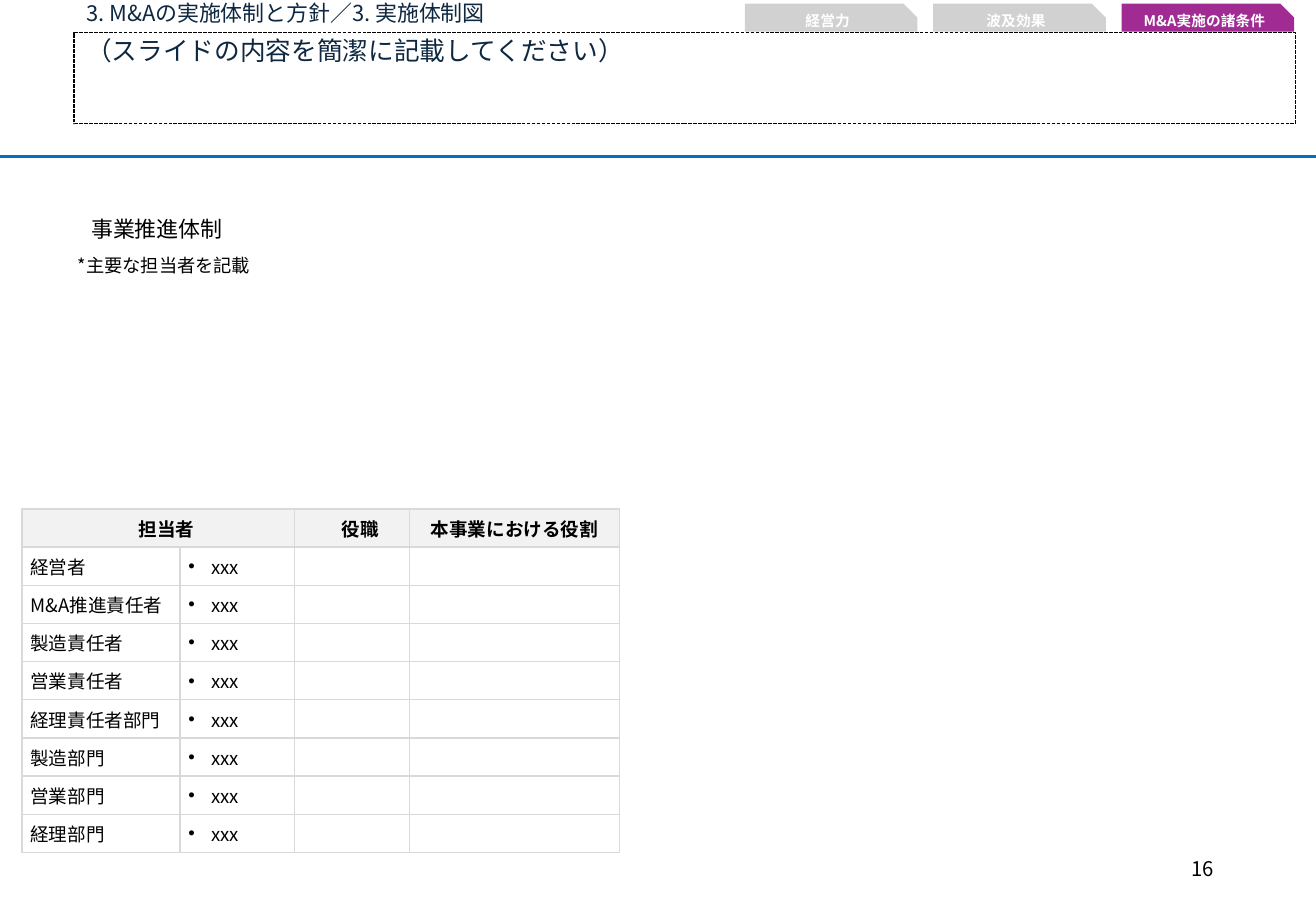
from lxml import etree
from pptx import Presentation
from pptx import util as u
from pptx.dml.color import RGBColor
from pptx.enum import dml, shapes, text
from pptx.oxml import ns

FONT = "Noto Sans CJK JP"
INK = dict(navy="0E2841", black="000000", white="FFFFFF", blue="0070C0",
           gray="D1D1D1", rule="D9D9D9", head="F2F2F2", plum="A02B93")
COLS, ROWS = 1083, 750
UNIT = u.Inches(0.01)
ALIGN = dict(l=text.PP_ALIGN.LEFT, c=text.PP_ALIGN.CENTER, r=text.PP_ALIGN.RIGHT)
STAFF = ["経営者", "M&A推進責任者", "製造責任者", "営業責任者", "経理責任者部門",
         "製造部門", "営業部門", "経理部門"]


def grid(*cells):
    return [round(n * UNIT) for n in cells]


def tint(name):
    return RGBColor.from_string(INK[name])


def add(node, tag, **attrs):
    return etree.SubElement(node, ns.qn(tag), **attrs)


def write(frame, words, size=11, color="black", bold=False, align="l",
          mid=True, space=None, left=0, first=0, bullet=None):
    frame.word_wrap = True
    frame.auto_size = text.MSO_AUTO_SIZE.NONE
    frame.vertical_anchor = text.MSO_ANCHOR.MIDDLE if mid else text.MSO_ANCHOR.TOP
    para = frame.paragraphs[0]
    para.alignment = ALIGN[align]
    if space:
        para.line_spacing = space
    props = para._p.get_or_add_pPr()
    props.set("marL", str(grid(left)[0]))
    props.set("indent", str(grid(first)[0]))
    if bullet:
        add(props, "a:buFont", typeface="Arial")
        add(props, "a:buChar", char=bullet)
    run = para.add_run()
    run.text = words
    font = run.font
    font.size, font.bold, font.name = u.Pt(size), bold, FONT
    font.color.rgb = tint(color)
    add(run._r.get_or_add_rPr(), "a:ea", typeface=FONT)


def block(slide, kind, box, fill=None):
    shape = slide.shapes.add_shape(kind, *grid(*box))
    shape.shadow.inherit = False
    shape.line.fill.background()
    if fill:
        shape.fill.solid()
        shape.fill.fore_color.rgb = tint(fill)
    else:
        shape.fill.background()
    return shape


def label(slide, box, words, **form):
    frame = slide.shapes.add_textbox(*grid(*box)).text_frame
    write(frame, words, **form)


def header(slide, box):
    x, y, w, h = box
    title = slide.shapes.title
    title.left, title.top, title.width, title.height = grid(x, y - 30, 561, 30)
    write(title.text_frame, "3. M&Aの実施体制と方針／3. 実施体制図",
          size=13, color="navy", mid=False, space=0.9)
    note = block(slide, shapes.MSO_SHAPE.RECTANGLE, box)
    note.line.color.rgb = tint("black")
    note.line.width = u.Pt(0.75)
    note.line.dash_style = dml.MSO_LINE.SQUARE_DOT
    write(note.text_frame, "（スライドの内容を簡潔に記載してください）",
          size=15.2, color="navy", mid=False, space=0.9)
    rule = slide.shapes.add_connector(
        shapes.MSO_CONNECTOR.STRAIGHT, *grid(0, y + h + 27, COLS, y + h + 27))
    rule.line.color.rgb = tint("blue")
    rule.line.width = u.Pt(2)
    add(rule._element.spPr, "a:effectLst")


def tabs(slide, box):
    x, y, w, h = box
    names = ["経営力", "波及効果", "M&A実施の諸条件"]
    gap = 13
    wide = (w - gap * (len(names) - 1)) / len(names)
    for i, name in enumerate(names):
        fill = "plum" if i == len(names) - 1 else "gray"
        tab = block(slide, shapes.MSO_SHAPE.SNIP_1_RECTANGLE,
                    (x + i * (wide + gap), y, wide, h), fill)
        tab.adjustments[0] = 0.5
        write(tab.text_frame, name, size=8.7, color="white", bold=True, align="c")


def intro(slide, box):
    x, y, w, h = box
    head = block(slide, shapes.MSO_SHAPE.RECTANGLE, (x, y, w, 26), "white")
    write(head.text_frame, "事業推進体制", size=13, align="c", first=15)
    label(slide, (x + 53, y + 21, 195, h - 21), "*主要な担当者を記載", size=10.8)


def edge(cell):
    props = cell._tc.get_or_add_tcPr()
    for side in "LRTB":
        line = add(props, "a:ln" + side, w=str(u.Pt(1)))
        add(add(line, "a:solidFill"), "a:srgbClr", val=INK["rule"])


def dress(cell, fill=None, pad=7):
    edge(cell)
    cell.margin_left = cell.margin_right = grid(pad)[0]
    cell.margin_top = cell.margin_bottom = 0
    cell.vertical_anchor = text.MSO_ANCHOR.MIDDLE
    if fill:
        cell.fill.solid()
        cell.fill.fore_color.rgb = tint(fill)
    else:
        cell.fill.background()


def roster(slide, box):
    heads = [("担当者", 14), None, ("役職", 14), ("本事業における役割", 0)]
    table = slide.shapes.add_table(
        len(STAFF) + 1, len(heads), *grid(*box)).table
    for col, wide in zip(table.columns, (130, 94.5, 94.5, 173)):
        col.width = grid(wide)[0]
    for row in table.rows:
        row.height = grid(box[3] / (len(STAFF) + 1))[0]
    for c, head in enumerate(heads):
        cell = table.cell(0, c)
        dress(cell, "head", 7 if c else 2)
        if head:
            write(cell.text_frame, head[0], bold=True, align="c", first=head[1])
    table.cell(0, 0).merge(table.cell(0, 1))
    for r, name in enumerate(STAFF, 1):
        for c in range(len(heads)):
            cell = table.cell(r, c)
            dress(cell)
            if c == 0:
                write(cell.text_frame, name)
            elif c == 1:
                write(cell.text_frame, "xxx", left=19, first=-19, bullet="•")
            else:
                add(cell.text_frame.paragraphs[0]._p, "a:endParaRPr", sz="1100")


def main():
    deck = Presentation()
    deck.slide_width, deck.slide_height = grid(COLS, ROWS)
    slide = deck.slides.add_slide(deck.slide_layouts[5])
    header(slide, (61, 27, 1005, 75))
    roster(slide, (18, 419, 492, 283))
    intro(slide, (1, 175, 241, 65))
    tabs(slide, (613, 3, 452, 23))
    label(slide, (765, 695, 244, 40), "16", size=12, align="r")
    deck.save("out.pptx")


if __name__ == "__main__":
    main()
